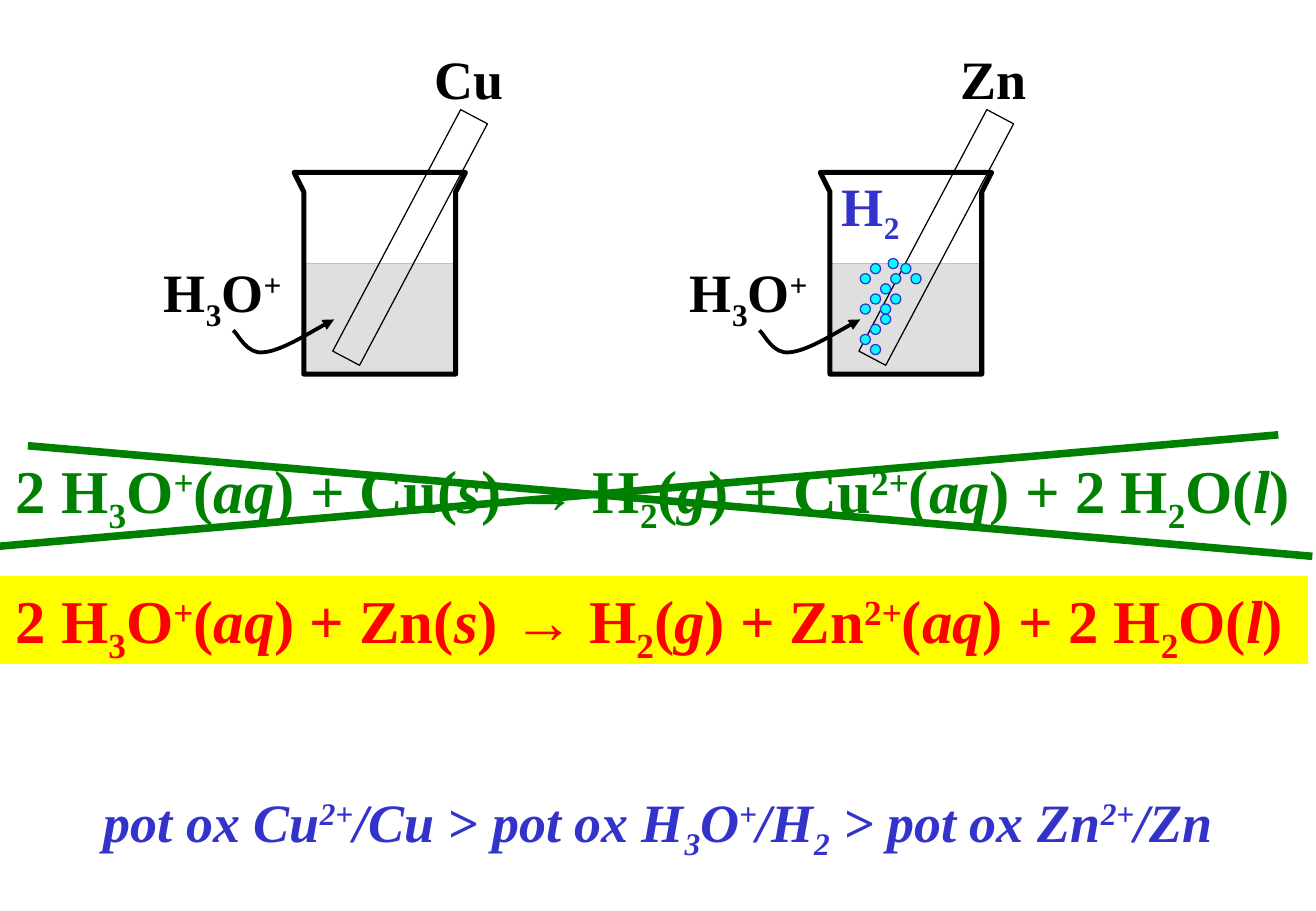
import pptx
import pptx.util
import pptx.dml.color
import pptx.enum.shapes
import pptx.enum.text
import pptx.oxml
import pptx.oxml.ns
from lxml import etree

Inches = pptx.util.Inches
Pt = pptx.util.Pt
RGBColor = pptx.dml.color.RGBColor
KIND = pptx.enum.shapes.MSO_SHAPE
ALIGN = pptx.enum.text.PP_ALIGN
ANCHOR = pptx.enum.text.MSO_ANCHOR
FIT = pptx.enum.text.MSO_AUTO_SIZE
qn = pptx.oxml.ns.qn

BLACK = RGBColor(0x00, 0x00, 0x00)
GREY = RGBColor(0xC0, 0xC0, 0xC0)
BLUE = RGBColor(0x33, 0x33, 0xCC)
CYAN = RGBColor(0x00, 0xFF, 0xFF)
RED = RGBColor(0xFF, 0x00, 0x00)
GREEN = RGBColor(0x00, 0x80, 0x00)
YELLOW = RGBColor(0xFF, 0xFF, 0x00)
FONT = "Times New Roman"

WIDTH, HEIGHT = 10.83, 7.5
BEAKERS = [("Cu", 0), ("Zn", 4.33)]
GLASS = [(2.42, 1.42), (2.5, 1.58), (2.5, 3.08), (3.75, 3.08), (3.75, 1.58), (3.83, 1.42)]
ARROW = [(1.92, 2.72), (1.96, 2.75), (2.03, 2.92), (2.17, 2.9),
         (2.31, 2.89), (2.63, 2.69), (2.75, 2.63)]
BUBBLES = [(2, 4), (3, 1), (0, 1), (2, 2), (1, 3), (5, 1), (0, 7), (1, 6),
           (3, 3), (4, 0), (1, 8), (0, 4), (1, 0), (2, 5), (2.75, -0.5)]
STEP = 1 / 12
ACID = "H|_3|O|^+"
GAS = "H|_2"
REACT = "2 H|_3|O|^+|(|*aq|) + {0}(|*s|) → H|_2|(|*g|) + {0}|^2+|(|*aq|) + 2 H|_2|O(|*l|)"
ORDER = "pot ox Cu|^2+|/Cu > pot ox H|_3|O|^+|/H|_2| > pot ox Zn|^2+|/Zn"
CROSS = [((-0.04, 4.5), (10.52, 3.58)), ((10.8, 4.58), (0.23, 3.67))]


def style(item, fill, line, width):
    item.shadow.inherit = False
    if fill is None:
        item.fill.background()
    else:
        item.fill.solid()
        item.fill.fore_color.rgb = fill
    item.line.color.rgb = line
    item.line.width = Pt(width)


def shape(kind, box, fill, line):
    item = slide.shapes.add_shape(kind, *map(Inches, box))
    style(item, fill, line, 0.75)
    return item


def outline(points, dx, width, close):
    spots = [(Inches(x + dx), Inches(y)) for x, y in points]
    build = slide.shapes.build_freeform(*spots[0])
    build.add_line_segments(spots[1:], close=close)
    item = build.convert_to_shape()
    style(item, None, BLACK, width)
    return item


def bend(item):
    steps = list(item._element.iter(qn("a:lnTo")))
    for k in range(0, len(steps), 3):
        curve = etree.Element(qn("a:cubicBezTo"))
        steps[k].addprevious(curve)
        for step in steps[k:k + 3]:
            curve.append(step[0])
            step.getparent().remove(step)


def write(item, text, size, color, wrap=True, slant=False):
    frame = item.text_frame
    frame.word_wrap = wrap
    frame.auto_size = FIT.SHAPE_TO_FIT_TEXT
    frame.vertical_anchor = ANCHOR.TOP
    para = frame.paragraphs[0]
    para.alignment = ALIGN.CENTER if wrap else ALIGN.LEFT
    font = para.font
    font.name, font.size, font.bold = FONT, Pt(size), True
    font.color.rgb = color
    for part in text.split("|"):
        run = para.add_run()
        run.text = part.lstrip("_^*")
        run.font.italic = slant or part[0] == "*"
        shift = {"_": "-25000", "^": "30000"}.get(part[0])
        if shift:
            run._r.get_or_add_rPr().set("baseline", shift)


def label(box, text, size, color, wrap=False, slant=False):
    item = slide.shapes.add_textbox(*map(Inches, box))
    write(item, text, size, color, wrap, slant)


def beaker(metal, dx):
    water = shape(KIND.RECTANGLE, (2.5 + dx, 2.17, 1.25, 0.92), GREY, GREY)
    tint = water._element.spPr.find(qn("a:solidFill"))[0]
    etree.SubElement(tint, qn("a:alpha")).set("val", "50000")
    outline(GLASS, dx, 3, True)
    rod = shape(KIND.RECTANGLE, (3.25 + dx, 0.83, 0.25, 2.25), None, BLACK)
    rod.rotation = 27.9
    label((3.48 + dx, 0.33, 0.77, 0.63), metal, 32, BLACK)
    label((1.25 + dx, 2.08, 1.2, 0.63), ACID, 32, BLACK)
    arrow = outline(ARROW, dx, 2.25, False)
    bend(arrow)
    line = arrow.line._get_or_add_ln()
    etree.SubElement(line, qn("a:tailEnd")).set("type", "triangle")


show = pptx.Presentation()
show.slide_width, show.slide_height = Inches(WIDTH), Inches(HEIGHT)
slide = show.slides.add_slide(show.slide_layouts[6])

for metal, dx in BEAKERS:
    beaker(metal, dx)
for col, row in BUBBLES:
    shape(KIND.OVAL, (7.08 + col * STEP, 2.17 + row * STEP, STEP, STEP), CYAN, BLUE)
label((6.83, 1.37, 0.69, 0.63), GAS, 32, BLUE)

band = shape(KIND.RECTANGLE, (-0.07, 4.75, WIDTH, 0.71), YELLOW, YELLOW)
write(band, REACT.format("Zn"), 36, RED)
label((-0.04, 3.68, WIDTH, 0.7), REACT.format("Cu"), 36, GREEN, True)
for start, end in CROSS:
    bar = slide.shapes.add_connector(
        pptx.enum.shapes.MSO_CONNECTOR.STRAIGHT, *map(Inches, start + end))
    bar.line.color.rgb = GREEN
    bar.line.width = Pt(4.5)
    etree.SubElement(bar._element.spPr, qn("a:effectLst"))
label((0, 6.44, WIDTH, 0.63), ORDER, 32, BLUE, True, True)

show.save("out.pptx")
